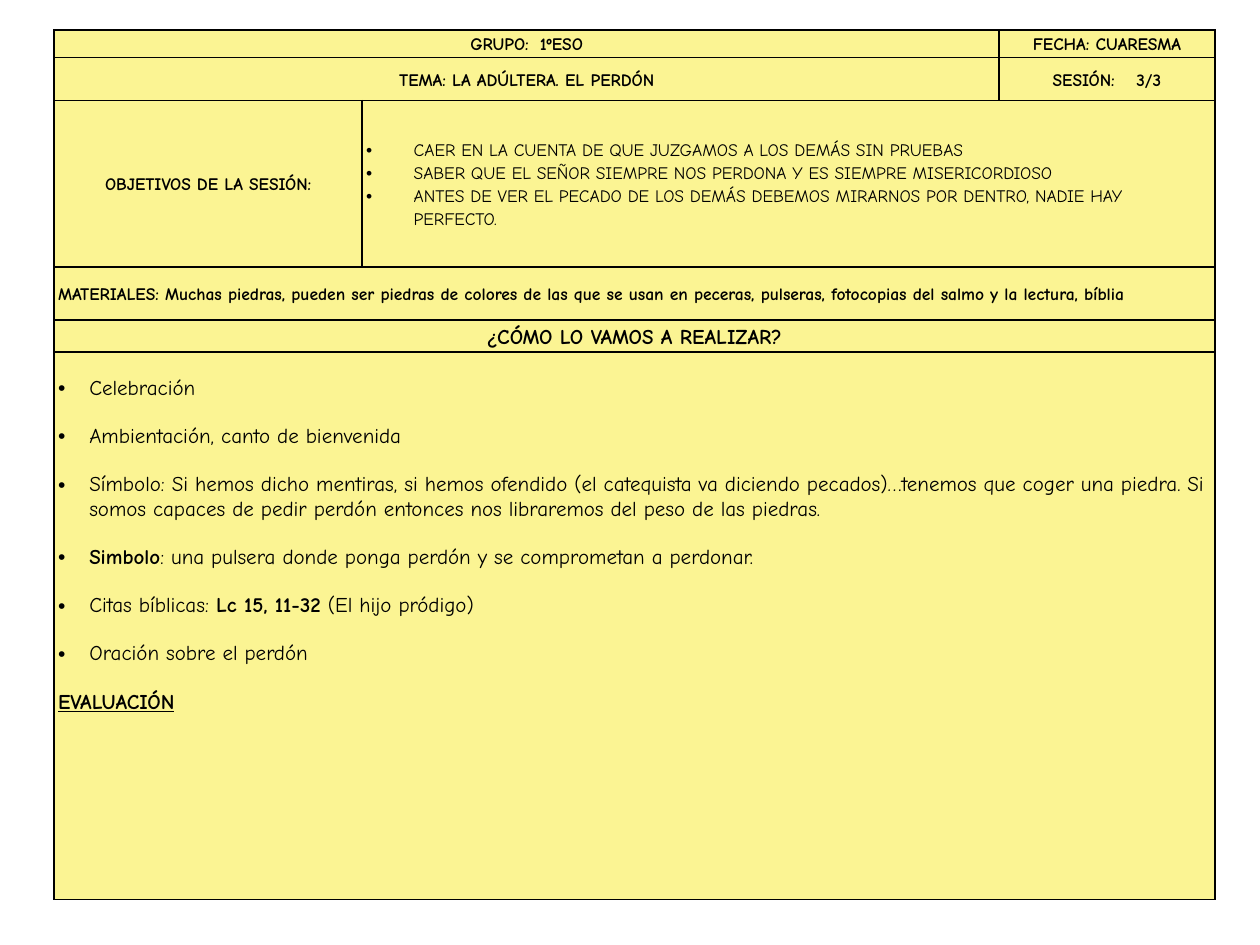
from lxml import etree
from pptx import Presentation
from pptx import util as u
from pptx.dml.color import RGBColor
from pptx.enum import text
from pptx.oxml import ns

FONT = "Comic Neue"
INK = "000000"
YELLOW = "FBF493"
COLUMNS = [6.21, 12.84, 4.35]
ROWS = [0.56, 0.87, 3.35, 1.07, 0.65, 11.03]
LINE_GAP = 13.8
MERGES = [(0, 0, 1), (1, 0, 1), (2, 1, 2), (3, 0, 2), (4, 0, 2), (5, 0, 2)]

BOLD = {"bold": True}
HEADING = {"bold": True, "underline": True}
CENTRED = {"alignment": text.PP_ALIGN.CENTER, "line_spacing": 1.15}
SPACED = {"line_spacing": 1.15}
STEP = {"space_after": u.Pt(LINE_GAP)}

LABELS = [
    (0, 0, 10, [("GRUPO:", BOLD), (" ", {"tracking": 3}), ("1ºESO", BOLD)]),
    (0, 2, 10, [("FECHA: CUARESMA", BOLD)]),
    (1, 0, 10, [("TEMA: LA ADÚLTERA. EL PERDÓN", BOLD)]),
    (1, 2, 10, [("SESIÓN:", BOLD), (" ", {"tracking": 9}), ("3/3", BOLD)]),
    (2, 0, 10, [("OBJETIVOS DE LA SESIÓN:", BOLD)]),
    (4, 0, 12, [("¿CÓMO LO VAMOS A REALIZAR?", BOLD)]),
]
GOALS = [
    "CAER EN LA CUENTA DE QUE JUZGAMOS A LOS DEMÁS SIN PRUEBAS",
    "SABER QUE EL SEÑOR SIEMPRE NOS PERDONA Y ES SIEMPRE MISERICORDIOSO",
    "ANTES DE VER EL PECADO DE LOS DEMÁS DEBEMOS MIRARNOS POR DENTRO, NADIE HAY PERFECTO.",
]
MATERIALS = (
    "MATERIALES: Muchas piedras, pueden ser piedras de colores de las que se usan "
    "en peceras, pulseras, fotocopias del salmo y la lectura, bíblia"
)
ACTIVITIES = [
    [("Celebración", {})],
    [("Ambientación, canto de bienvenida", {})],
    [("Símbolo: Si hemos dicho mentiras, si hemos ofendido (el catequista va diciendo "
      "pecados)…tenemos que coger una piedra. Si somos capaces de pedir perdón entonces "
      "nos libraremos del peso de las piedras.", {})],
    [("Simbolo", BOLD), (": una pulsera donde ponga perdón y se comprometan a perdonar.", {})],
    [("Citas bíblicas: ", {}), ("Lc 15, 11-32", BOLD), (" (El hijo pródigo)", {})],
    [("Oración sobre el perdón", {})],
]


def color(value):
    return RGBColor.from_string(value)


def set_values(target, values):
    for name, value in values.items():
        setattr(target, name, value)


def add_borders(cell):
    properties = cell._tc.get_or_add_tcPr()
    for side in ("lnL", "lnR", "lnT", "lnB"):
        line = etree.SubElement(properties, ns.qn(f"a:{side}"), w=str(u.Pt(1)))
        fill = etree.SubElement(line, ns.qn("a:solidFill"))
        etree.SubElement(fill, ns.qn("a:srgbClr"), val=INK)


def style_cell(cell):
    add_borders(cell)
    cell.fill.solid()
    cell.fill.fore_color.rgb = color(YELLOW)
    set_values(cell, {
        "margin_left": u.Cm(0.08), "margin_right": u.Cm(0.08),
        "margin_top": 0, "margin_bottom": 0,
        "vertical_anchor": text.MSO_ANCHOR.MIDDLE,
    })


def add_spans(para, spans, size):
    """Add (wording, format) pairs; tracking is extra letter spacing in points."""
    for wording, values in spans:
        span = para.add_run()
        span.text = wording
        values = {"name": FONT, "size": u.Pt(size), "bold": False, **values}
        tracking = values.pop("tracking", None)
        set_values(span.font, values)
        span.font.color.rgb = color(INK)
        if tracking:
            span.font._element.set("spc", str(tracking * 100))


def set_bullet(para, indent):
    properties = para._p.get_or_add_pPr()
    properties.set("marL", str(u.Cm(indent)))
    properties.set("indent", str(-u.Cm(indent)))
    etree.SubElement(properties, ns.qn("a:buFont"), typeface="Arial")
    etree.SubElement(properties, ns.qn("a:buChar"), char="•")


def fill_cell(cell, paragraphs, size, layout, bullet_indent=None):
    frame = cell.text_frame
    for number, spans in enumerate(paragraphs):
        para = frame.add_paragraph() if number else frame.paragraphs[0]
        set_values(para, layout)
        if bullet_indent:
            set_bullet(para, bullet_indent)
        add_spans(para, spans, size)


def add_grid(page):
    table = page.shapes.add_table(
        len(ROWS), len(COLUMNS), u.Cm(1.09), u.Cm(0.6),
        u.Cm(sum(COLUMNS)), u.Cm(sum(ROWS))).table
    set_values(table, {"first_row": False, "horz_banding": False})
    for column, width in zip(table.columns, COLUMNS):
        column.width = u.Cm(width)
    for row, height in zip(table.rows, ROWS):
        row.height = u.Cm(height)
    for cell in table.iter_cells():
        style_cell(cell)
    for row, first, last in MERGES:
        table.cell(row, first).merge(table.cell(row, last))
    return table


def fill_activities(cell):
    cell.vertical_anchor = text.MSO_ANCHOR.TOP
    cell.margin_top = u.Pt(LINE_GAP + 8)
    cell.margin_top = u.Pt(LINE_GAP)
    fill_cell(cell, ACTIVITIES, 12, STEP, 0.63)
    add_spans(cell.text_frame.add_paragraph(), [("EVALUACIÓN", HEADING)], 12)


def main():
    deck = Presentation()
    set_values(deck, {"slide_width": u.Cm(25.4), "slide_height": u.Cm(19.05)})
    page = deck.slides.add_slide(deck.slide_layouts[6])
    table = add_grid(page)
    for row, column, size, spans in LABELS:
        fill_cell(table.cell(row, column), [spans], size, CENTRED)
    fill_cell(table.cell(2, 1), [[(goal, {})] for goal in GOALS], 10, SPACED, 0.96)
    fill_cell(table.cell(3, 0), [[(MATERIALS, BOLD)]], 10, SPACED)
    fill_activities(table.cell(5, 0))
    deck.save("out.pptx")


if __name__ == "__main__":
    main()
